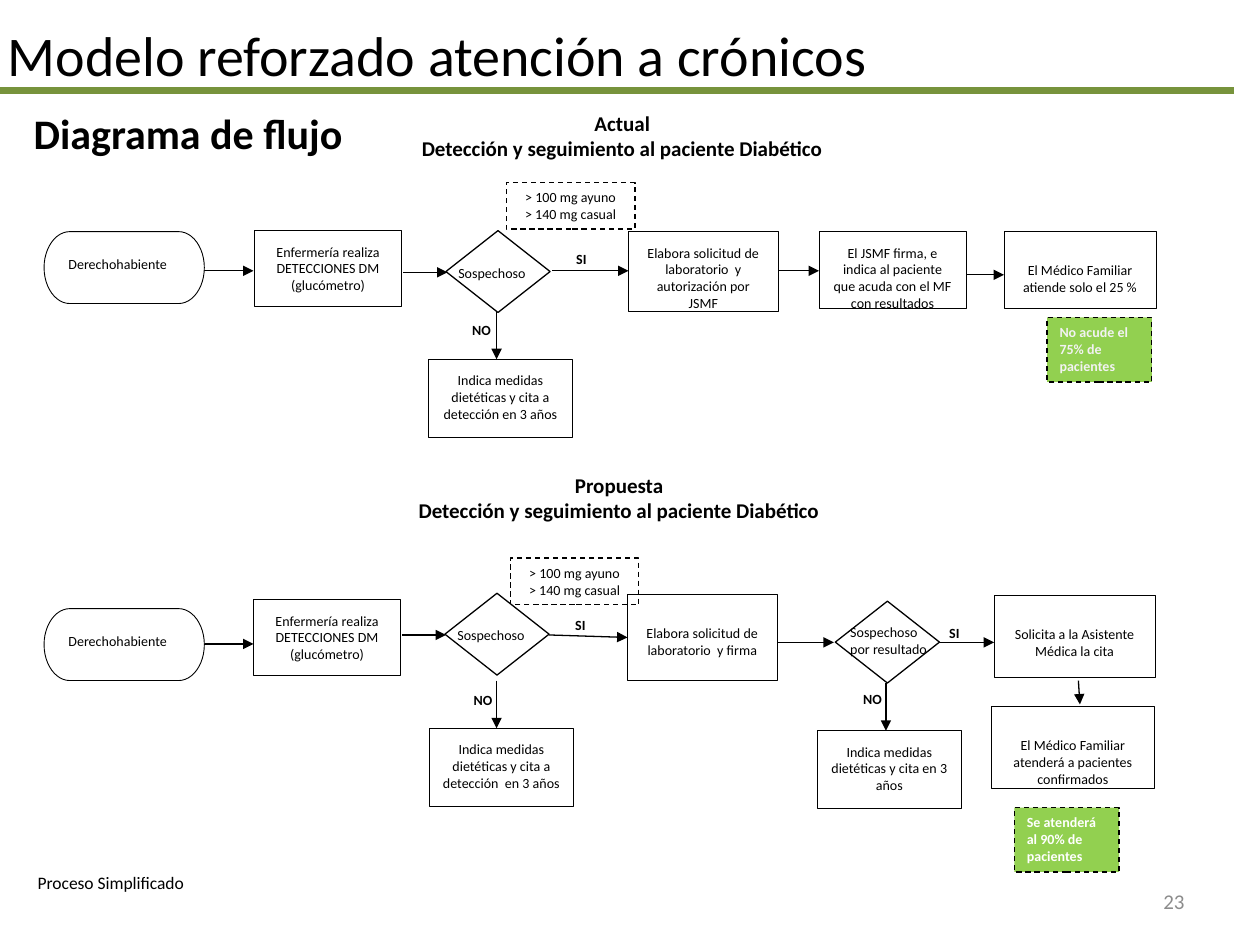
from lxml.etree import SubElement
from pptx import Presentation
from pptx.dml.color import RGBColor as RGB
from pptx.enum.dml import MSO_LINE as Dash
from pptx.enum.shapes import MSO_CONNECTOR as Link, MSO_SHAPE as Kind
from pptx.enum.text import MSO_ANCHOR as Anchor, MSO_AUTO_SIZE as Fit, PP_ALIGN as Align
from pptx.oxml.ns import qn
from pptx.util import Cm, Pt

INK = {
    "black": "000000", "white": "FFFFFF", "pale": "F2F2F2", "gray": "8C8C8C",
    "lime": "92D050", "olive": "77933C",
}

prs = Presentation()
prs.slide_width, prs.slide_height = Cm(25.4), Cm(19.05)
slide = prs.slides.add_slide(prs.slide_layouts[5])
shapes = slide.shapes


def add_box(area, text="", kind=None, fill=None, line=None, dash=False, size=8, bold=False,
            ink="black", align=Align.LEFT, wrap=True, pad=0.13, anchor=Anchor.TOP):
    """Add a shape of the given kind, or a text box if there is none."""
    place = [Cm(n) for n in area]
    if kind is None:
        box = shapes.add_textbox(*place)
    else:
        box = shapes.add_shape(kind, *place)
        box.shadow.inherit = False
        box.fill.background()
        box.line.fill.background()
    if fill:
        box.fill.solid()
        box.fill.fore_color.rgb = RGB.from_string(INK[fill])
    if line:
        box.line.color.rgb = RGB.from_string(INK["black"])
        box.line.width = Pt(line)
    if dash:
        box.line.dash_style = Dash.DASH
    frame = box.text_frame
    frame.word_wrap = wrap
    frame.vertical_anchor = anchor
    frame.margin_left = frame.margin_right = Cm(0.25)
    frame.margin_top, frame.margin_bottom = Cm(pad), Cm(0.13)
    if text:
        frame.text = text
    for par in frame.paragraphs:
        par.alignment = align
        par.font.name, par.font.size, par.font.bold = "Calibri", Pt(size), bold
        par.font.color.rgb = RGB.from_string(INK[ink])


def add_line(ends, ink="black", width=0.75, arrow=True):
    line = shapes.add_connector(Link.STRAIGHT, *[Cm(n) for n in ends])
    line.line.color.rgb = RGB.from_string(INK[ink])
    line.line.width = Pt(width)
    if arrow:
        SubElement(line.line._get_or_add_ln(), qn("a:tailEnd"), type="triangle")
    SubElement(line._element.spPr, qn("a:effectLst"))


# Title and headings
title = shapes.title
title.left, title.top, title.width, title.height = Cm(-0.1), Cm(0.03), Cm(22.86), Cm(2.11)
frame = title.text_frame
frame.text = "Modelo reforzado atención a crónicos"
frame.auto_size = Fit.NONE
frame.vertical_anchor = Anchor.MIDDLE
par = frame.paragraphs[0]
par.alignment = Align.LEFT
par.font.name, par.font.size = "Calibri", Pt(32)
par.font.color.rgb = RGB.from_string(INK["black"])
add_line((-0.05, 1.83, 24.87, 1.83), "olive", 4, arrow=False)

add_box((0.43, 2.03, 6.81, 1.27), "Diagrama de flujo", Kind.RECTANGLE, "white",
        size=24, bold=True, wrap=False)
for area, name in [((7.01, 2.1, 11.07, 1.45), "Actual"),
                   ((6.27, 9.4, 12.42, 1.45), "Propuesta")]:
    add_box(area, name + "\nDetección y seguimiento al paciente Diabético",
            size=12, bold=True, align=Align.CENTER)

# Branch labels
for x, y, text in [(11.25, 4.93, "SI"), (11.23, 12.29, "SI"), (18.77, 12.47, "SI"),
                   (9.27, 6.35, "NO"), (9.3, 13.82, "NO"), (17.15, 13.79, "NO")]:
    add_box((x, y, 0.94, 0.51), text, Kind.RECTANGLE, "white", bold=True,
            align=Align.CENTER if text == "SI" else Align.LEFT)

# Arrows
for ends in [
    (4.11, 5.46, 5.11, 5.46), (8.13, 5.49, 9.02, 5.49), (11.13, 5.46, 12.67, 5.46),
    (15.67, 5.46, 16.51, 5.46), (19.46, 5.54, 20.24, 5.54), (10.01, 6.25, 10.01, 7.24),
    (4.11, 12.98, 5.11, 12.98), (8.1, 12.8, 8.99, 12.8), (11.07, 12.8, 12.65, 12.85),
    (15.65, 12.95, 16.81, 12.95), (18.92, 12.95, 20.04, 12.95),
    (10.01, 13.72, 10.01, 14.68), (17.86, 13.77, 17.86, 14.73), (21.74, 13.72, 21.77, 14.2),
]:
    add_line(ends)

# Steps; the low ones start their text one line further down
high, low = 0.25, 0.6
nurse = "Enfermería realiza DETECCIONES DM (glucómetro)"
for area, pad, text in [
    ((5.13, 4.65, 2.97, 1.52), high, nurse),
    ((12.67, 4.67, 3.02, 1.6), high, "Elabora solicitud de laboratorio  y autorización por JSMF"),
    ((16.51, 4.67, 2.97, 1.55), high,
     "El JSMF firma, e indica al paciente que acuda con el MF con resultados"),
    ((20.24, 4.67, 3.07, 1.55), low, "El Médico Familiar atiende solo el 25 %"),
    ((8.64, 7.24, 2.9, 1.57), high, "Indica medidas dietéticas y cita a detección en 3 años"),
    ((5.11, 12.09, 2.97, 1.52), high, nurse),
    ((12.65, 11.99, 3.02, 1.73), low, "Elabora solicitud de laboratorio  y firma"),
    ((20.04, 12.01, 3.25, 1.65), low, "Solicita a la Asistente Médica la cita"),
    ((19.99, 14.25, 3.28, 1.65), low, "El Médico Familiar atenderá a pacientes confirmados"),
    ((8.66, 14.68, 2.9, 1.57), high, "Indica medidas dietéticas y cita a detección  en 3 años"),
    ((16.48, 14.73, 2.9, 1.57), high, "Indica medidas dietéticas y cita en 3 años"),
]:
    add_box(area, text, Kind.FLOWCHART_PROCESS, "white", 0.5, align=Align.CENTER, pad=pad)

# Dashed notes
for x, y in [(10.21, 3.68), (10.29, 11.25)]:
    add_box((x, y, 2.59, 0.94), "> 100 mg ayuno\n> 140 mg casual", Kind.RECTANGLE,
            line=0.75, dash=True, align=Align.CENTER)
for x, y, ink, text in [(21.11, 6.4, "pale", "No acude el 75% de pacientes"),
                        (20.45, 16.28, "white", "Se atenderá al 90% de pacientes")]:
    add_box((x, y, 2.11, 1.3), text, Kind.RECTANGLE, "lime", 0.75, True, bold=True, ink=ink)

# Decisions and starts, each with a loose caption
for x, y, dx, dy, text in [(8.99, 4.65, 0, 0.55, "Sospechoso"),
                           (8.97, 11.96, 0, 0.55, "Sospechoso"),
                           (16.84, 12.12, 0.05, 0.33, "Sospechoso\npor resultado")]:
    add_box((x, y, 2.1, 1.65), kind=Kind.DIAMOND, fill="white", line=0.75)
    tall = "\n" in text
    add_box((x + dx, y + dy, 2.08 if tall else 1.88, 0.94 if tall else 0.61), text, wrap=False)
for y in (4.67, 12.27):
    add_box((0.89, y, 3.23, 1.45), kind=Kind.FLOWCHART_TERMINATOR, fill="white", line=0.5)
    add_box((1.13, y + 0.36, 2.54, 0.61), "Derechohabiente", wrap=False)

# Foot
add_box((0.51, 17.45, 3.51, 0.69), "Proceso Simplificado", size=10, wrap=False)
add_box((18.21, 17.65, 5.92, 1.02), "23", size=12, ink="gray", align=Align.RIGHT,
        anchor=Anchor.MIDDLE)

prs.save("out.pptx")
